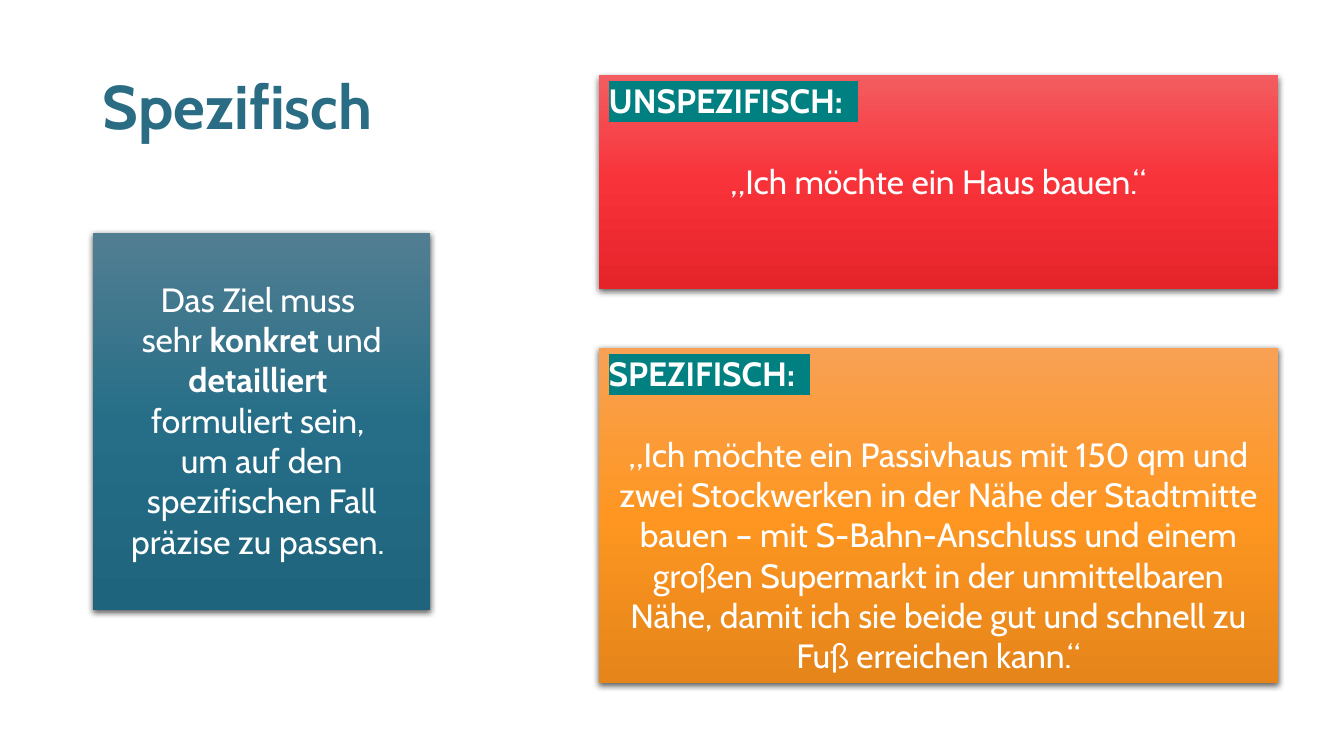
from copy import deepcopy

from lxml import etree
from pptx import Presentation
from pptx.dml.color import RGBColor
from pptx.enum.shapes import MSO_SHAPE
from pptx.enum.text import MSO_ANCHOR, PP_ALIGN
from pptx.oxml.ns import qn
from pptx.util import Cm, Pt

RECT = MSO_SHAPE.RECTANGLE
TOP, MIDDLE = MSO_ANCHOR.TOP, MSO_ANCHOR.MIDDLE
LEFT, CENTER = PP_ALIGN.LEFT, PP_ALIGN.CENTER

WHITE = RGBColor(0xFF, 0xFF, 0xFF)
BLUE = RGBColor(0x2A, 0x6C, 0x83)
TEAL = RGBColor(0x00, 0x80, 0x80)
RED_FADE = (RGBColor(0xF3, 0x5C, 0x60), RGBColor(0xF8, 0x32, 0x39),
            RGBColor(0xE5, 0x24, 0x2A))
ORANGE_FADE = (RGBColor(0xF8, 0xA1, 0x54), RGBColor(0xFE, 0x96, 0x21),
               RGBColor(0xE5, 0x85, 0x1A))
BLUE_FADE = (RGBColor(0x52, 0x7E, 0x92), RGBColor(0x26, 0x6E, 0x87),
             RGBColor(0x1D, 0x64, 0x7C))

FONT = "Cabin"
LINE = Pt(29)  # height of one line of body text
TITLE_FORM = {"name": FONT, "size": Pt(44), "bold": True}
BODY_FORM = {"name": FONT, "size": Pt(24), "bold": False}
LABEL_FORM = {**BODY_FORM, "bold": True}

GOAL = (("Das Ziel muss \nsehr ", BODY_FORM),
        ("konkret", LABEL_FORM),
        (" und ", BODY_FORM),
        ("detailliert \n", LABEL_FORM),
        ("formuliert sein, \num auf den spezifischen Fall präzise zu passen. ",
         BODY_FORM))
VAGUE = "„Ich möchte ein Haus bauen.“"
EXACT = ("„Ich möchte ein Passivhaus mit 150 qm und zwei Stockwerken in der "
         "Nähe der Stadtmitte bauen – mit S-Bahn-Anschluss und einem großen "
         "Supermarkt in der unmittelbaren Nähe, damit ich sie beide gut und "
         "schnell zu Fuß erreichen kann.“")


def add_text(para, text, form, color=WHITE):
    """Add formatted runs to a paragraph, with a line break at each newline."""
    for i, part in enumerate(text.split("\n")):
        if i:
            para.add_line_break()
        if part:
            run = para.add_run()
            run.text = part
            for key, value in form.items():
                setattr(run.font, key, value)
            run.font.color.rgb = color


def mark(run, color):
    """Put a highlight colour behind a run."""
    light = etree.Element(qn("a:highlight"))
    etree.SubElement(light, qn("a:srgbClr"), val=str(color))
    run.font._element.find(qn("a:solidFill")).addnext(light)


def fade(fill, colors):
    """Fill from top to bottom with evenly spaced colours."""
    fill.gradient()
    fill.gradient_angle = 270
    stops = fill._xPr.find(qn("a:gradFill")).find(qn("a:gsLst"))
    stops.append(deepcopy(stops[-1]))
    for i, (stop, color) in enumerate(zip(fill.gradient_stops, colors)):
        stop.color.rgb = color
        stop.position = i / (len(colors) - 1)


def add_shadow(shape):
    shape.shadow.inherit = False
    effects = shape._element.spPr.find(qn("a:effectLst"))
    outer = etree.SubElement(effects, qn("a:outerShdw"), blurRad=str(Pt(4.5)),
                             dist=str(Pt(1.5)), dir="5400000",
                             rotWithShape="0")
    black = etree.SubElement(outer, qn("a:srgbClr"), val="000000")
    etree.SubElement(black, qn("a:alpha"), val="63000")


def add_panel(slide, box, colors):
    panel = slide.shapes.add_shape(RECT, *box)
    fade(panel.fill, colors)
    panel.line.fill.background()
    add_shadow(panel)
    frame = panel.text_frame
    frame.word_wrap = True
    frame.vertical_anchor = TOP
    return frame


def add_title(slide, box, text):
    title = slide.shapes.title
    title.left, title.top, title.width, title.height = box
    title.text_frame.vertical_anchor = MIDDLE
    para = title.text_frame.paragraphs[0]
    para.alignment = LEFT
    para.line_spacing = 0.9
    add_text(para, text, TITLE_FORM, BLUE)


def add_goal(slide, box):
    frame = add_panel(slide, box, BLUE_FADE)
    frame.margin_top += LINE
    para = frame.paragraphs[0]
    para.alignment = CENTER
    for text, form in GOAL:
        add_text(para, text, form)


def add_case(slide, box, colors, label, quote):
    """Add a panel with a highlighted label above a centred quote."""
    frame = add_panel(slide, box, colors)
    head = frame.paragraphs[0]
    head.alignment = LEFT
    add_text(head, label, LABEL_FORM)
    mark(head.runs[0], TEAL)
    body = frame.add_paragraph()
    body.alignment = CENTER
    body.space_before = LINE
    add_text(body, quote, BODY_FORM)


def main():
    deck = Presentation()
    deck.slide_width, deck.slide_height = Cm(33.87), Cm(19.05)
    slide = deck.slides.add_slide(deck.slide_layouts[5])
    left, right, width = Cm(2.34), Cm(15.09), Cm(17.12)
    add_title(slide, (left, Cm(0.91), Cm(29.21), Cm(3.68)), "Spezifisch")
    add_case(slide, (right, Cm(8.76), width, Cm(8.46)), ORANGE_FADE,
             "SPEZIFISCH:  ", EXACT)
    add_goal(slide, (left, Cm(5.87), Cm(8.51), Cm(9.5)))
    add_case(slide, (right, Cm(1.9), width, Cm(5.38)), RED_FADE,
             "UNSPEZIFISCH:  ", VAGUE)
    deck.save("out.pptx")


if __name__ == "__main__":
    main()
